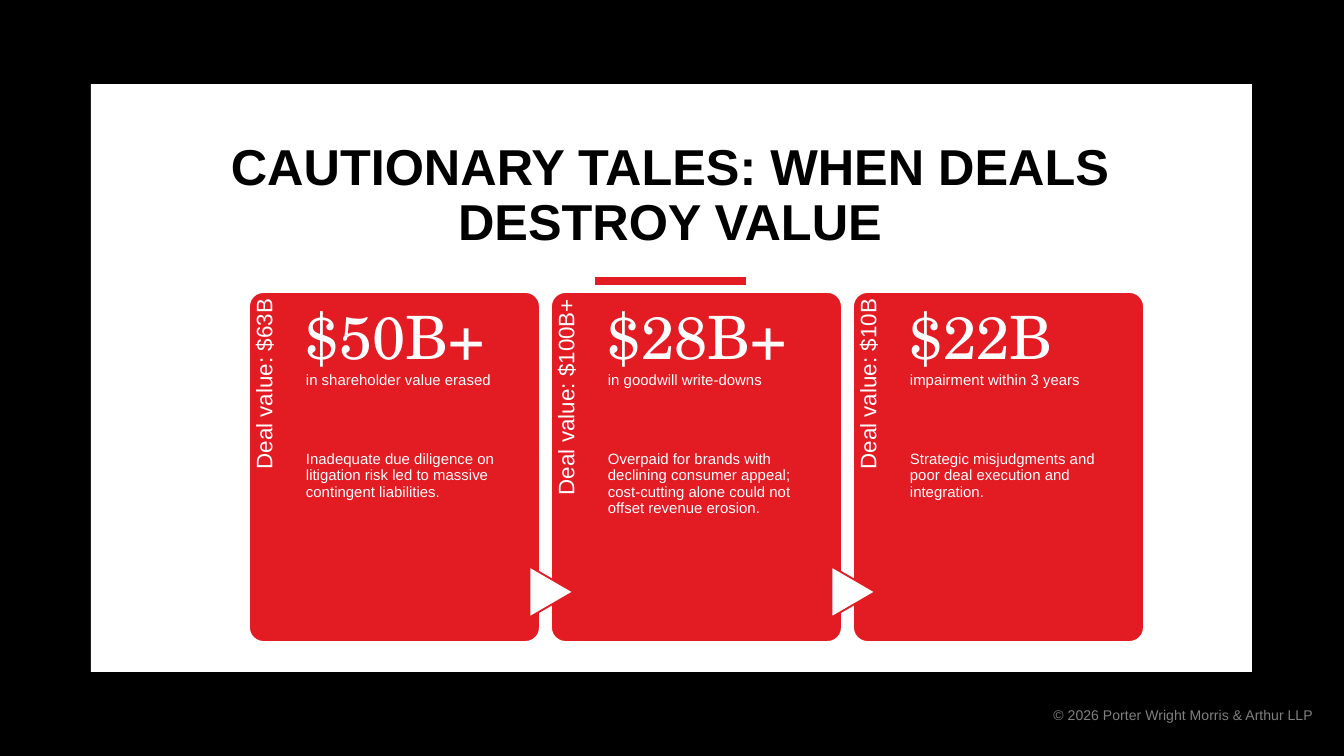
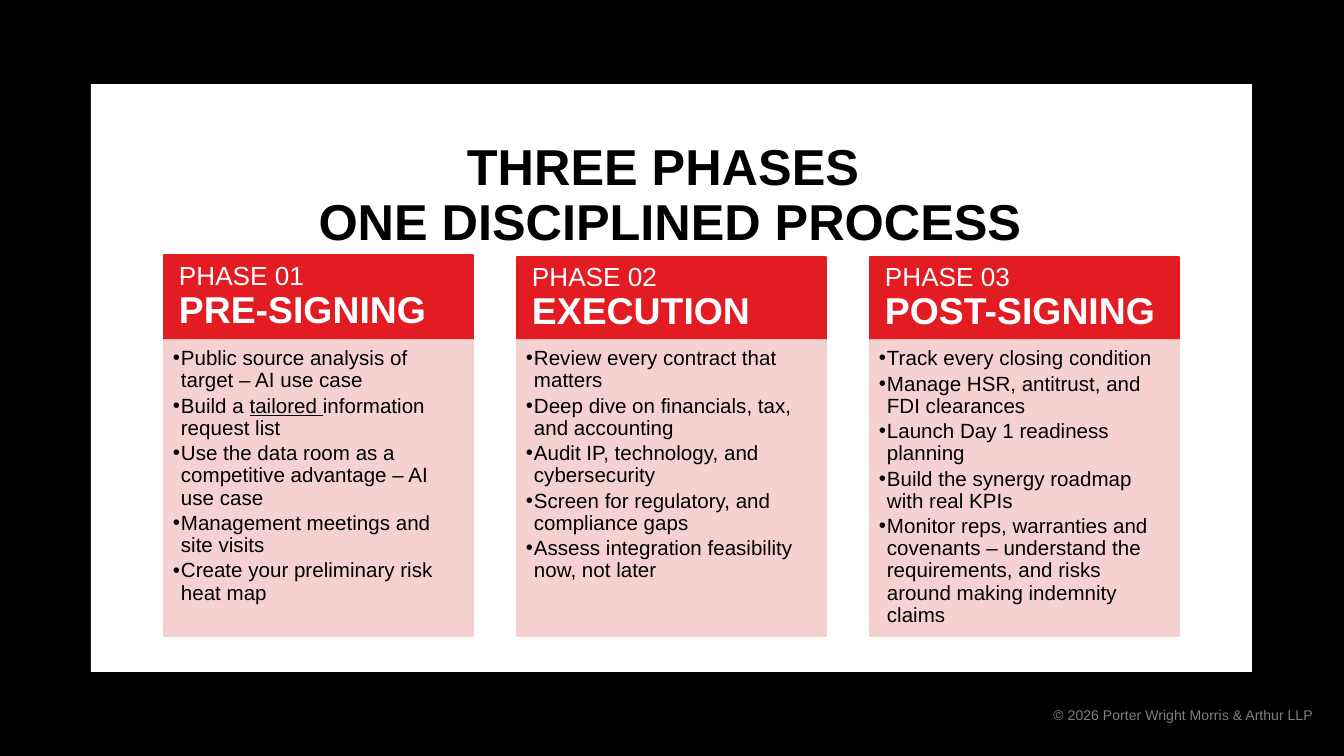
from lxml import etree
from pptx import Presentation
from pptx import util as u
from pptx.dml.color import RGBColor
from pptx.enum import shapes, text
from pptx.oxml.ns import qn

PX = 914400 / 134.4
W, H = 1344, 756
COLORS = {"black": "000000", "white": "FFFFFF", "red": "E31B23",
          "pink": "F4CDCD", "gray": "808080"}
SANS, SERIF = "Arial", "TeX Gyre Schola"
LEFT, CENTER, RIGHT = text.PP_ALIGN.LEFT, text.PP_ALIGN.CENTER, text.PP_ALIGN.RIGHT
TOP, MIDDLE, BOTTOM = (text.MSO_ANCHOR.TOP, text.MSO_ANCHOR.MIDDLE,
                       text.MSO_ANCHOR.BOTTOM)
SHAPE = shapes.MSO_SHAPE

COPYRIGHT = "© 2026 Porter Wright Morris & Arthur LLP"

TALES_TITLE = "CAUTIONARY TALES: WHEN DEALS DESTROY VALUE"
TALES = [
    ("Deal value: $63B", "$50B+", "in shareholder value erased",
     "Inadequate due diligence on litigation risk led to massive "
     "contingent liabilities."),
    ("Deal value: $100B+", "$28B+", "in goodwill write-downs",
     "Overpaid for brands with declining consumer appeal; cost-cutting alone "
     "could not offset revenue erosion."),
    ("Deal value: $10B", "$22B", "impairment within 3 years",
     "Strategic misjudgments and poor deal execution and integration."),
]

PHASES_TITLE = "THREE PHASES \nONE DISCIPLINED PROCESS"
# Header top, label, name, bullets; each bullet is a list of (text, style) runs
PHASES = [
    (255, "PHASE 01", "PRE-SIGNING", [
        [("Public source analysis of target – AI use case", {})],
        [("Build a ", {}), ("tailored", {"underline": True}),
         (" ", {"underline": True, "italic": True}),
         ("information request list", {})],
        [("Use the data room as a competitive advantage – AI use case", {})],
        [("Management meetings and site visits", {})],
        [("Create your preliminary risk heat map", {})],
    ]),
    (257, "PHASE 02", "EXECUTION", [
        [("Review every contract that matters", {})],
        [("Deep dive on financials, tax, and accounting", {})],
        [("Audit IP, technology, and cybersecurity", {})],
        [("Screen for regulatory, and compliance gaps", {})],
        [("Assess integration feasibility now, not later", {})],
    ]),
    (257, "PHASE 03", "POST-SIGNING", [
        [("Track every closing condition", {})],
        [("Manage HSR, antitrust, and FDI clearances", {})],
        [("Launch Day 1 readiness planning", {})],
        [("Build the synergy roadmap with real KPIs", {})],
        [("Monitor reps, warranties and covenants – understand the "
          "requirements, and risks around making indemnity claims", {})],
    ]),
]


def px(n):
    return u.Emu(round(n * PX))


def box(*sizes):
    return [px(n) for n in sizes]


def rgb(name):
    return RGBColor.from_string(COLORS[name])


def add_shape(s, kind, at, fill, line=None):
    sp = s.shapes.add_shape(kind, *box(*at))
    sp.shadow.inherit = False
    sp.fill.solid()
    sp.fill.fore_color.rgb = rgb(fill)
    if line:
        sp.line.color.rgb = rgb(line)
        sp.line.width = u.Pt(1)
    else:
        sp.line.fill.background()
    return sp


def set_frame(sp, insets=(13, 7, 13, 7), anchor=TOP):
    """Set wrapping, anchor and insets (left, top, right, bottom)."""
    tf = sp.text_frame
    tf.word_wrap = True
    tf.auto_size = text.MSO_AUTO_SIZE.NONE
    tf.vertical_anchor = anchor
    tf.margin_left, tf.margin_top, tf.margin_right, tf.margin_bottom = box(*insets)
    return tf


def add_text(s, at, insets=(13, 7, 13, 7), anchor=TOP):
    return set_frame(s.shapes.add_textbox(*box(*at)), insets, anchor)


def format_paragraph(p, align=LEFT, after=0):
    p.alignment = align
    p.line_spacing = 0.9
    p.space_before = u.Pt(0)
    p.space_after = u.Pt(after)


def add_run(p, words, size, color, font=SANS, **style):
    """Add words as runs, with a line break of the same size at each newline."""
    for i, line in enumerate(words.split("\n")):
        if i:
            p.add_line_break()
            etree.SubElement(p._p[-1], qn("a:rPr"), sz=str(size * 100))
        if line:
            r = p.add_run()
            r.text = line
            r.font.name, r.font.size = font, u.Pt(size)
            r.font.color.rgb = rgb(color)
            for name, value in style.items():
                setattr(r.font, name, value)


def set_bullet(p, indent):
    pPr = p._p.get_or_add_pPr()
    pPr.set("marL", str(px(indent)))
    pPr.set("indent", str(-px(indent)))
    etree.SubElement(pPr, qn("a:buFont"), typeface=SANS)
    etree.SubElement(pPr, qn("a:buChar"), char="•")


def add_frame(s, layout):
    """Draw the black surround, white panel and footer, and move them to the layout."""
    add_shape(s, SHAPE.RECTANGLE, (0, 0, W, H), "black")
    add_shape(s, SHAPE.RECTANGLE, (91, 84, 1161, 588), "white")
    tf = add_text(s, (872, 673, 454, 83), anchor=MIDDLE)
    p = tf.paragraphs[0]
    p.alignment = RIGHT
    add_run(p, COPYRIGHT, 7.5, "gray")
    parts = [sp for sp in s.shapes if not sp.is_placeholder]
    for i, sp in enumerate(parts):
        layout.shapes.element.insert(2 + i, sp.element)


def set_title(s, words):
    sp = s.shapes.title
    sp.left, sp.top, sp.width, sp.height = box(105, 99, 1130, 159)
    p = set_frame(sp, anchor=BOTTOM).paragraphs[0]
    format_paragraph(p, CENTER)
    add_run(p, words, 27, "black", bold=True)


def add_rule(s):
    rule = s.shapes.add_connector(shapes.MSO_CONNECTOR.STRAIGHT,
                                  *box(595, 281, 746, 281))
    rule.line.color.rgb = rgb("red")
    rule.line.width = u.Pt(4)
    etree.SubElement(rule.element.spPr, qn("a:effectLst"))


def add_tale(s, i, deal, loss, caption, reason):
    x, y, w, h = 249 + 302 * i, 292, 291, 350
    card = add_shape(s, SHAPE.ROUNDED_RECTANGLE, (x, y, w, h), "red", "white")
    card.adjustments[0] = 0.05

    label = s.shapes.add_textbox(*box(x - 116, y + 114, 288, 58))
    label.rotation = 270
    p = set_frame(label, (0, 5, 8, 0)).paragraphs[0]
    format_paragraph(p, RIGHT)
    add_run(p, deal, 12, "white")

    if i:
        arrow = add_shape(s, SHAPE.FLOWCHART_EXTRACT, (x - 25, 570, 51, 44),
                          "white", "red")
        arrow.rotation = 90

    tf = add_text(s, (x + 57, y, 218, h), (0, 16, 0, 0))
    p = tf.paragraphs[0]
    format_paragraph(p, after=34)
    add_run(p, loss + "\n", 32, "white", SERIF)
    add_run(p, caption, 8, "white")
    p = tf.add_paragraph()
    format_paragraph(p)
    add_run(p, reason, 8, "white")


def add_phase(s, i, top, label, name, bullets):
    x, w, body_top = 164, 309, 340
    x += 353 * i
    header = add_shape(s, SHAPE.RECTANGLE, (x, top, w, body_top - top - 1),
                       "red", "red")
    p = set_frame(header, (15, 8, 15, 8), MIDDLE).paragraphs[0]
    format_paragraph(p)
    add_run(p, label + "\n", 14, "white")
    add_run(p, name, 20, "white", bold=True)

    body = add_shape(s, SHAPE.RECTANGLE, (x, body_top, w, 296), "pink", "pink")
    for color in body.element.spPr.iter(qn("a:srgbClr")):
        etree.SubElement(color, qn("a:alpha"), val="90000")
    tf = set_frame(body, (9, 8, 12, 13))
    for n, runs in enumerate(bullets):
        p = tf.add_paragraph() if n else tf.paragraphs[0]
        format_paragraph(p, after=1.7)
        set_bullet(p, 8)
        for words, style in runs:
            add_run(p, words, 11, "black", **style)


def main():
    prs = Presentation()
    prs.slide_width, prs.slide_height = box(W, H)
    layout = prs.slide_layouts[5]

    s = prs.slides.add_slide(layout)
    add_frame(s, layout)
    set_title(s, TALES_TITLE)
    add_rule(s)
    for i, tale in enumerate(TALES):
        add_tale(s, i, *tale)

    s = prs.slides.add_slide(layout)
    set_title(s, PHASES_TITLE)
    for i, phase in enumerate(PHASES):
        add_phase(s, i, *phase)

    prs.save("out.pptx")


if __name__ == "__main__":
    main()
